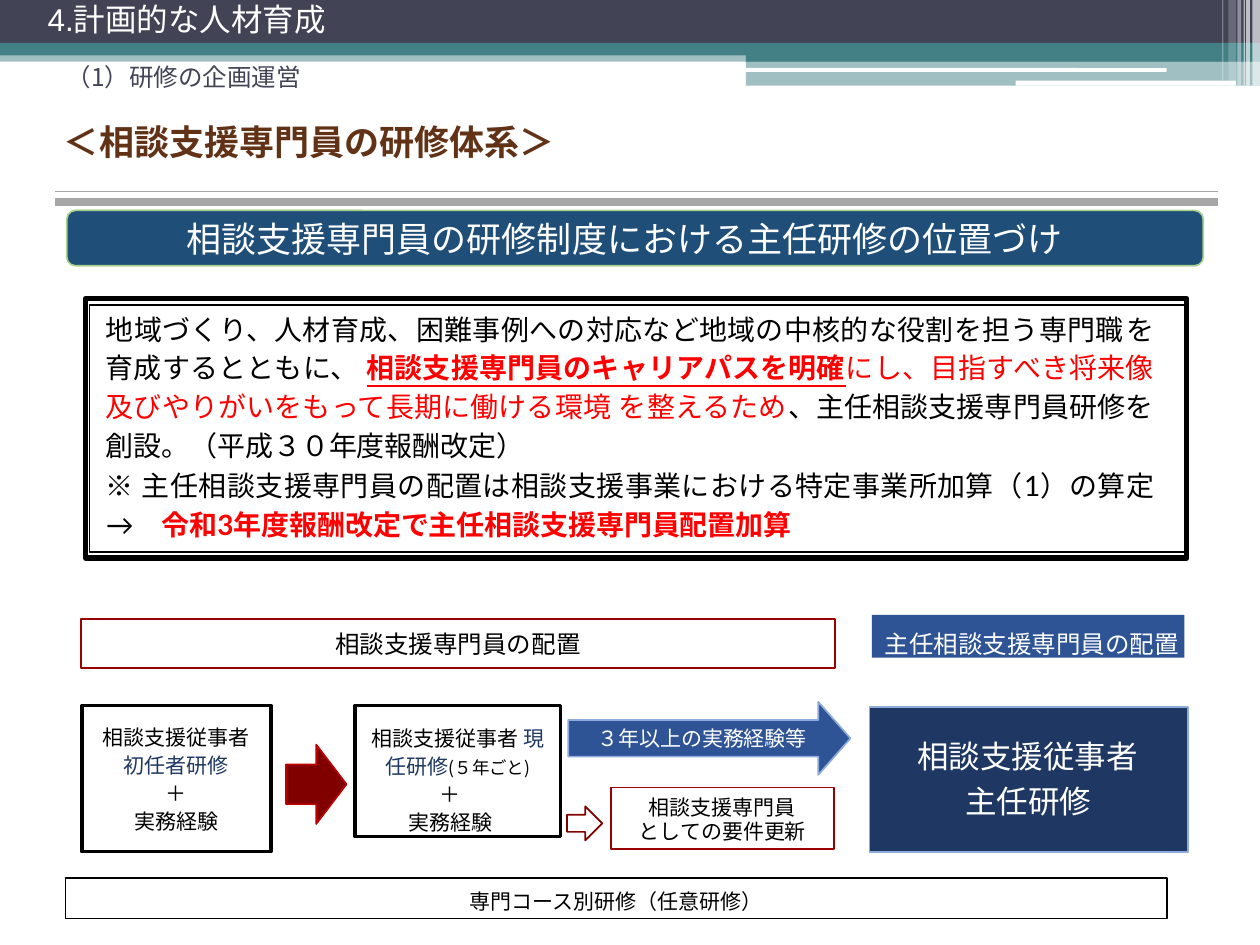
import dataclasses

import pptx
import pptx.dml.color
import pptx.enum.lang
import pptx.enum.shapes
import pptx.enum.text
import pptx.oxml
import pptx.oxml.ns
import pptx.util

Inches = pptx.util.Inches
Pt = pptx.util.Pt
SHAPE = pptx.enum.shapes.MSO_SHAPE
ALIGN = pptx.enum.text.PP_ALIGN
ANCHOR = pptx.enum.text.MSO_ANCHOR


@dataclasses.dataclass(frozen=True)
class Theme:
    """Colours, fonts and type sizes of the slide."""
    white: str = "FFFFFF"
    black: str = "000000"
    slate: str = "424456"
    teal: str = "438086"
    gray: str = "A6A6A6"
    brown: str = "623217"
    red: str = "FF0000"
    maroon: str = "800000"
    dark_red: str = "990000"
    bright_red: str = "C00000"
    navy: str = "1F3863"
    blue: str = "2E5496"
    pale_blue: str = "8FAADC"
    header_blue: str = "1F4E79"
    pale_green: str = "A9D18E"
    japanese: str = "Noto Sans CJK JP"
    latin: str = "Lato"
    title_font: str = "Arial"
    heading_font: str = "Roboto"
    heading: int = 20
    title: int = 18
    body: int = 16
    label: int = 14
    small: int = 12
    note: int = 10


THEME = Theme()


def rgb(color):
    """Turn a hex string into a colour."""
    return pptx.dml.color.RGBColor.from_string(color)


def add_run(paragraph, text, size, color=THEME.black, font=THEME.japanese, **formats):
    """Add one run of text with its font."""
    run = paragraph.add_run()
    run.text = text
    values = {"size": Pt(size), "name": font,
              "language_id": pptx.enum.lang.MSO_LANGUAGE_ID.JAPANESE, **formats}
    for name, value in values.items():
        setattr(run.font, name, value)
    run.font.color.rgb = rgb(color)
    east_asian = pptx.oxml.parse_xml(
        f'<a:ea {pptx.oxml.ns.nsdecls("a")} typeface="{THEME.latin}"/>')
    run.font._element.find(pptx.oxml.ns.qn("a:latin")).addnext(east_asian)


def write(shape, paragraphs, insets=(0, 0, 0, 0), anchor=ANCHOR.TOP):
    """Fill a shape with paragraphs given as (runs, formats, margins)."""
    frame = shape.text_frame
    left, top, right, bottom = (Inches(inset) for inset in insets)
    values = {"word_wrap": True, "vertical_anchor": anchor, "margin_left": left,
              "margin_top": top, "margin_right": right, "margin_bottom": bottom}
    for name, value in values.items():
        setattr(frame, name, value)
    for index, (runs, formats, margins) in enumerate(paragraphs):
        paragraph = frame.add_paragraph() if index else frame.paragraphs[0]
        for name, value in {"alignment": ALIGN.LEFT, **formats}.items():
            setattr(paragraph, name, value)
        for name, value in margins.items():
            paragraph._p.get_or_add_pPr().set(name, str(Inches(value)))
        for text, run_formats in runs:
            add_run(paragraph, text, **run_formats)


def add_box(slide, bounds, fill=None, line=None, width=0.96, kind=SHAPE.RECTANGLE,
            adjustments=(), alpha=None):
    """Add a preset shape with a plain fill and outline."""
    shape = slide.shapes.add_shape(kind, *(Inches(value) for value in bounds))
    shape.shadow.inherit = False
    for index, value in enumerate(adjustments):
        shape.adjustments[index] = value
    if fill:
        shape.fill.solid()
        shape.fill.fore_color.rgb = rgb(fill)
    else:
        shape.fill.background()
    if alpha:
        shape.fill._xPr.find(".//" + pptx.oxml.ns.qn("a:srgbClr")).append(pptx.oxml.parse_xml(
            f'<a:alpha {pptx.oxml.ns.nsdecls("a")} val="{alpha * 1000}"/>'))
    if line:
        shape.line.color.rgb = rgb(line)
        shape.line.width = Pt(width)
    else:
        shape.line.fill.background()
    return shape


def add_text(slide, bounds, paragraphs, **options):
    """Add a text box."""
    box = slide.shapes.add_textbox(*(Inches(value) for value in bounds))
    write(box, paragraphs, **options)


def add_rule(slide, top, width):
    """Add a horizontal rule under the heading."""
    rule = slide.shapes.add_connector(pptx.enum.shapes.MSO_CONNECTOR.STRAIGHT, Inches(0.44),
                                      Inches(top), Inches(9.67), Inches(top))
    rule.line.color.rgb = rgb(THEME.gray)
    rule.line.width = Pt(width)
    rule._element.spPr.append(pptx.oxml.parse_xml(
        f'<a:effectLst {pptx.oxml.ns.nsdecls("a")}/>'))


def line_of(text, formats=None, margins=None, **run_formats):
    """Describe a paragraph of a single run."""
    return [(text, run_formats)], formats or {}, margins or {}


def add_banner(slide):
    """Draw the bands and strips at the top."""
    for bounds, color, alpha in (
            ((0, 0.4, 10, 0.09), THEME.teal, 50), ((0, 0, 10, 0.34), THEME.slate, None),
            ((0, 0.34, 10, 0.1), THEME.teal, None), ((5.92, 0.39, 4.08, 0.1), THEME.teal, None),
            ((5.92, 0.48, 4.08, 0.2), THEME.teal, 50)):
        add_box(slide, bounds, color, alpha=alpha)
    for bounds in ((5.91, 0.54, 3.35, 0.03), (8.06, 0.64, 1.75, 0.04)):
        add_box(slide, bounds, THEME.white, kind=SHAPE.ROUNDED_RECTANGLE)
    for left, width, height, alpha in (
            (9.94, 0.06, 0.68, 65), (9.89, 0.03, 0.68, 65), (9.87, 0.01, 0.68, 60),
            (9.82, 0.03, 0.68, 40), (9.75, 0.06, 0.64, 20), (9.7, 0.01, 0.64, 30)):
        add_box(slide, (left, 0, width, height), THEME.white, alpha=alpha)


def add_headings(slide):
    """Write the titles, the rules and the header bar."""
    insets = (0.1, 0.05, 0.1, 0.05)
    add_rule(slide, 1.52, 0.48)
    add_rule(slide, 1.6, 4.56)
    add_box(slide, (0.53, 1.67, 9.02, 0.44), THEME.header_blue, THEME.pale_green,
            kind=SHAPE.ROUNDED_RECTANGLE, adjustments=(0.16,))
    add_text(slide, (1.47, 1.71, 7.03, 0.36), [line_of(
        "相談支援専門員の研修制度における主任研修の位置づけ", margins={"marL": 0.01},
        size=THEME.heading, color=THEME.white)], insets=(0, 0.02, 0, 0))
    add_text(slide, (0.28, 0, 9.15, 0.3), [line_of(
        "4.計画的な人材育成", size=THEME.title, color=THEME.white, font=THEME.title_font)],
        insets=(0.1, 0, 0.1, 0), anchor=ANCHOR.MIDDLE)
    add_text(slide, (0.43, 0.44, 9, 0.47), [line_of(
        "（1）研修の企画運営", size=THEME.label, color=THEME.slate)], insets=insets)
    add_text(slide, (0.41, 0.87, 7.97, 0.51), [line_of(
        "＜相談支援専門員の研修体系＞", size=THEME.heading, color=THEME.brown,
        font=THEME.heading_font, bold=True)], insets=insets, anchor=ANCHOR.MIDDLE)


def add_summary(slide):
    """Write the double-framed explanation."""
    add_box(slide, (0.68, 2.37, 8.74, 2.06), line=THEME.black, width=3)
    add_box(slide, (0.71, 2.42, 8.7, 1.96), line=THEME.black, width=1)
    plain = {"size": THEME.body}
    mixed = {**plain, "font": THEME.latin}
    red = {**mixed, "color": THEME.red}
    strong = {**red, "bold": True}
    formats = {"alignment": ALIGN.JUSTIFY, "line_spacing": 1.15, "space_before": Pt(1)}
    purpose = [("地域づくり、人材育成、困難事例への対応など地域の中核的な役割を担う専門職", plain),
               ("を育成するとともに、 ", mixed),
               ("相談支援専門員のキャリアパスを明確", {**strong, "underline": True}),
               ("にし、目指すべき将来像及びやりがいをもって長期に働ける環境 を整えるため", red),
               ("、主任相談支援専門員研修を創設", mixed), ("。（", plain),
               ("平成３０年度報酬改定）", mixed)]
    addition = [("※ 主任相談支援専門員の配置は相談支援事業における特定事業所加算（1）の算定→\u3000", mixed),
                ("令和3年度報酬改定で主任相談支援専門員配置加算", strong)]
    add_text(slide, (0.83, 2.43, 8.33, 1.86),
             [(runs, formats, {"marL": 0.01}) for runs in (purpose, addition)],
             insets=(0, 0.01, 0, 0))


def add_training_path(slide):
    """Draw the training steps with their arrows and labels."""
    small = {"size": THEME.small}
    center = {"alignment": ALIGN.CENTER, "space_before": Pt(1.6)}
    practice = ("＋", "実務経験")
    first = add_box(slide, (0.65, 5.6, 1.5, 1.16), line=THEME.black, width=2.04)
    write(first, [line_of("相談支援従事者", center, **small),
                  line_of("初任者研修", center, color=THEME.navy, **small),
                  *(line_of(text, center, **small) for text in practice)], (0, 0.15, 0, 0))
    current = add_box(slide, (2.82, 5.6, 1.63, 1.04), line=THEME.black, width=2.04)
    runs = [("相談支援従事者 ", small), ("現任研修", {**small, "color": THEME.navy}),
            ("(５年ごと)", {"size": THEME.note})]
    write(current, [(runs, {**center, "line_spacing": 1.11}, {"marL": 0.12, "marR": 0.12}),
                    *(line_of(text, center, {"marR": 0.12}, **small) for text in practice)],
          (0, 0.14, 0, 0))
    chief = add_box(slide, (6.9, 5.61, 2.53, 1.15), THEME.navy, THEME.pale_blue)
    write(chief, [line_of("相談支援従事者 主任研修", {"line_spacing": 1.2},
                          {"marL": 0.76, "marR": 0.38, "indent": -0.38}, size=THEME.title,
                          color=THEME.white)], (0, 0.18, 0, 0))
    for bounds, fill, line, head in (
            ((2.27, 5.91, 0.48, 0.63), THEME.maroon, THEME.bright_red, 0.5),
            ((4.51, 5.57, 2.24, 0.58), THEME.blue, THEME.pale_blue, 0.44),
            ((4.5, 6.4, 0.28, 0.27), None, THEME.maroon, 0.5)):
        add_box(slide, bounds, fill, line, kind=SHAPE.RIGHT_ARROW, adjustments=(0.5, head))
    add_text(slide, (4.73, 5.74, 1.7, 0.23), [line_of(
        "３年以上の実務経験等", margins={"marL": 0.01}, color=THEME.white, **small)],
        insets=(0, 0.02, 0, 0))
    renewal = add_box(slide, (4.85, 6.25, 1.77, 0.49), line=THEME.dark_red)
    write(renewal, [line_of("相談支援専門員 としての要件更新", {"line_spacing": Pt(13.9)},
                            {"marL": 0.22, "marR": 0.2, "indent": 0.08}, **small)],
          (0, 0.06, 0, 0))
    placement = add_box(slide, (0.64, 4.91, 5.99, 0.39), line=THEME.dark_red, width=1.2)
    write(placement, [line_of("相談支援専門員の配置", center, size=THEME.label)], (0, 0.08, 0, 0))
    chief_placement = add_box(slide, (6.92, 4.88, 2.48, 0.34), THEME.blue)
    write(chief_placement, [line_of("主任相談支援専門員の配置", margins={"marL": 0.1},
                                    size=THEME.label, color=THEME.white)], (0, 0.11, 0, 0))
    courses = add_box(slide, (0.52, 6.97, 8.74, 0.32), line=THEME.black)
    write(courses, [line_of("専門コース別研修（任意研修）", center, font=THEME.latin, **small)],
          (0, 0.08, 0, 0))


def main():
    """Build and save the slide."""
    presentation = pptx.Presentation()
    presentation.slide_width, presentation.slide_height = Inches(10), Inches(7.5)
    slide = presentation.slides.add_slide(presentation.slide_layouts[6])
    add_banner(slide)
    add_headings(slide)
    add_training_path(slide)
    add_summary(slide)
    presentation.save("out.pptx")


if __name__ == "__main__":
    main()
